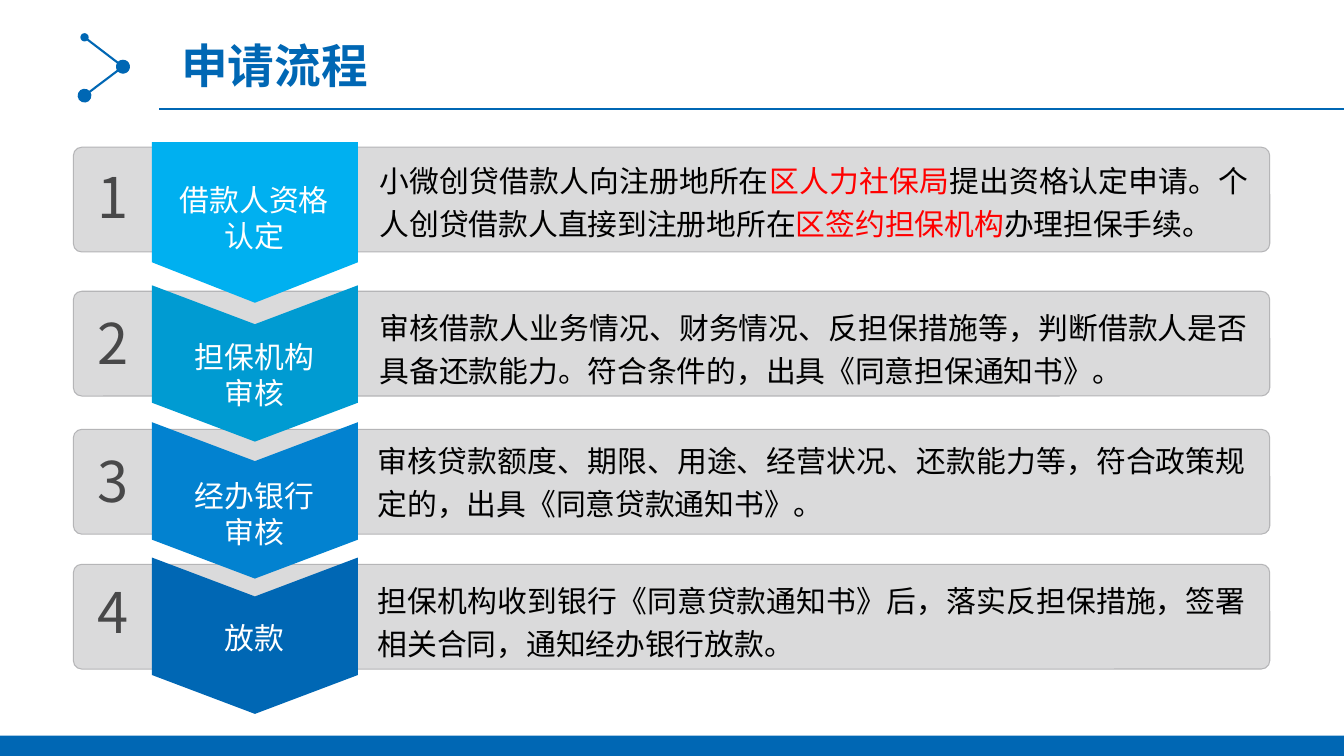
import pptx
import pptx.util
import pptx.dml.color
import pptx.enum.shapes
import pptx.enum.text
import pptx.oxml.ns
import lxml.etree

Cm = pptx.util.Cm
Pt = pptx.util.Pt
MSO_SHAPE = pptx.enum.shapes.MSO_SHAPE
PP_ALIGN = pptx.enum.text.PP_ALIGN
qn = pptx.oxml.ns.qn

COLORS = {
    "brand": "0067B4", "card": "DADADB", "card_line": "B5B5B7",
    "number": "484849", "text": "000000", "accent": "FF0000", "white": "FFFFFF",
}
CJK_FONT = "Noto Sans CJK SC"
SLIDE_WIDTH, SLIDE_HEIGHT = 33.87, 19.05
CARD_LEFT, CARD_WIDTH, CARD_HEIGHT = 1.85, 30.15, 2.64

# Each description alternates plain and accented pieces; offsets (cm) are from the card top
STEPS = [
    {"top": 3.71, "arrow": -0.13, "arrow_height": 4.05, "depth": 1.02, "notch": False,
     "color": "00B0F0", "label": "借款人资格认定", "label_offset": 0.74,
     "number_offset": 0.25, "text_left": 7.47, "text_offset": 0.08, "font": CJK_FONT,
     "pieces": ["小微创贷借款人向注册地所在", "区人力社保局",
                "提出资格认定申请。个人创贷借款人直接到注册地所在", "区签约担保机构",
                "办理担保手续。"]},
    {"top": 7.34, "arrow": -0.15, "arrow_height": 3.94, "depth": 0.98, "notch": True,
     "color": "009BD2", "label": "担保机构\n审核", "label_offset": 1.07,
     "number_offset": 0.3, "text_left": 7.47, "text_offset": 0.15, "font": "Calibri",
     "pieces": ["审核借款人业务情况、财务情况、反担保措施等，判断借款人是否具备还款能力。"
                "符合条件的，出具《同意担保通知书》。"]},
    {"top": 10.82, "arrow": -0.18, "arrow_height": 3.94, "depth": 0.98, "notch": True,
     "color": "0282D0", "label": "经办银行\n审核", "label_offset": 1.09,
     "number_offset": 0.3, "text_left": 7.42, "text_offset": 0.03, "font": "Calibri",
     "pieces": ["审核贷款额度、期限、用途、经营状况、还款能力等，符合政策规定的，"
                "出具《同意贷款通知书》。"]},
    {"top": 14.22, "arrow": -0.17, "arrow_height": 3.94, "depth": 0.98, "notch": True,
     "color": "0067B4", "label": "放款", "label_offset": 1.27,
     "number_offset": 0.2, "text_left": 7.42, "text_offset": 0.15, "font": "Calibri",
     "pieces": ["担保机构收到银行《同意贷款通知书》后，落实反担保措施，签署相关合同，"
                "通知经办银行放款。"]},
]


def rgb(value):
    return pptx.dml.color.RGBColor.from_string(value)


def paint(shape, fill, line=None):
    shape.shadow.inherit = False
    shape.fill.solid()
    shape.fill.fore_color.rgb = rgb(fill)
    if line:
        shape.line.color.rgb = rgb(line)
        shape.line.width = 0
    else:
        shape.line.fill.background()


def format_run(run, size, color, font=CJK_FONT, bold=False):
    run.font.size = Pt(size)
    run.font.bold = bold
    run.font.color.rgb = rgb(color)
    run.font.name = font
    east_asian = lxml.etree.SubElement(run.font._element, qn("a:ea"))
    east_asian.set("typeface", CJK_FONT)


def add_text(slide, box, pieces, size, colors, font=CJK_FONT, align=PP_ALIGN.CENTER,
             spacing=None, bold=False, insets=(0.25, 0.13), wrap=True):
    """Text box whose pieces take the given colours in turn."""
    frame = slide.shapes.add_textbox(*map(Cm, box)).text_frame
    frame.word_wrap = wrap
    frame.margin_left = frame.margin_right = Cm(insets[0])
    frame.margin_top = frame.margin_bottom = Cm(insets[1])
    frame.text = pieces[0]
    for piece in pieces[1:]:
        frame.paragraphs[0].add_run().text = piece
    for paragraph in frame.paragraphs:
        paragraph.alignment = align
        paragraph.line_spacing = spacing
        for index, run in enumerate(paragraph.runs):
            format_run(run, size, colors[index % len(colors)], font, bold)


def add_line(slide, start, end, width, dots=()):
    connector = slide.shapes.add_connector(
        pptx.enum.shapes.MSO_CONNECTOR.STRAIGHT, *map(Cm, (*start, *end)))
    connector.line.color.rgb = rgb(COLORS["brand"])
    connector.line.width = Pt(width)
    line = connector.line._get_or_add_ln()
    for tag, dot in zip(("a:headEnd", "a:tailEnd"), dots):
        lxml.etree.SubElement(line, qn(tag), type="oval", w=dot, len=dot)
    lxml.etree.SubElement(connector._element.spPr, qn("a:effectLst"))


def add_header(slide, left, top, width, height):
    # Dotted angle mark
    tip = (left + 0.97, top + 0.74)
    add_line(slide, (left, top), tip, 1.5, ("med", "lg"))
    add_line(slide, tip, (left, top + 1.47), 1.5, ("lg", "lg"))
    # Title and rule
    add_text(slide, (left + 2.11, top - 0.2, 5.44, 1.78), ["申请流程"], 33.3,
             [COLORS["brand"]], "Arial", PP_ALIGN.LEFT, bold=True,
             insets=(0.33, 0.18), wrap=False)
    add_line(slide, (left + 1.88, top + height), (left + width, top + height), 1)


def add_footer(slide, left, top, width, height):
    bar = slide.shapes.add_shape(MSO_SHAPE.RECTANGLE, *map(Cm, (left, top, width, height)))
    paint(bar, COLORS["brand"])


def add_card(slide, left, top, width, height):
    card = slide.shapes.add_shape(
        MSO_SHAPE.ROUNDED_RECTANGLE, *map(Cm, (left, top, width, height)))
    card.adjustments[0] = 0.08
    paint(card, COLORS["card"], COLORS["card_line"])


def add_arrow(slide, left, top, width, height, depth, notch, color):
    right, middle, shoulder = left + width, left + width / 2, top + height - depth
    points = [(right, top), (right, shoulder), (middle, top + height),
              (left, shoulder), (left, top)]
    if notch:
        points.append((middle, top + depth))
    corners = [(Cm(x), Cm(y)) for x, y in points]
    builder = slide.shapes.build_freeform(*corners[0], scale=1.0)
    builder.add_line_segments(corners[1:], close=True)
    paint(builder.convert_to_shape(), color)


def add_step(slide, left, top, number, step):
    add_arrow(slide, left + 1.98, top + step["arrow"], 5.19, step["arrow_height"],
              step["depth"], step["notch"], step["color"])
    add_text(slide, (left + 0.15, top + step["number_offset"], 1.68, 1.96),
             [str(number)], 40, [COLORS["number"]])
    add_text(slide, (left + 2.39, top + step["label_offset"], 4.34, 2.08),
             [step["label"]], 21.3, [COLORS["white"]])
    add_text(slide, (left + step["text_left"], top + step["text_offset"], 22.4, 2.44),
             step["pieces"], 21.3, [COLORS["text"], COLORS["accent"]], step["font"],
             PP_ALIGN.JUSTIFY, spacing=1.2)


def main():
    presentation = pptx.Presentation()
    presentation.slide_width = Cm(SLIDE_WIDTH)
    presentation.slide_height = Cm(SLIDE_HEIGHT)
    slide = presentation.slides.add_slide(presentation.slide_layouts[6])

    add_footer(slide, 0, 18.54, SLIDE_WIDTH, 0.55)
    add_header(slide, 2.13, 0.94, SLIDE_WIDTH - 2.13, 1.81)
    # All cards lie behind the overlapping arrows
    for step in STEPS:
        add_card(slide, CARD_LEFT, step["top"], CARD_WIDTH, CARD_HEIGHT)
    for number, step in enumerate(STEPS, 1):
        add_step(slide, CARD_LEFT, step["top"], number, step)

    presentation.save("out.pptx")


if __name__ == "__main__":
    main()
